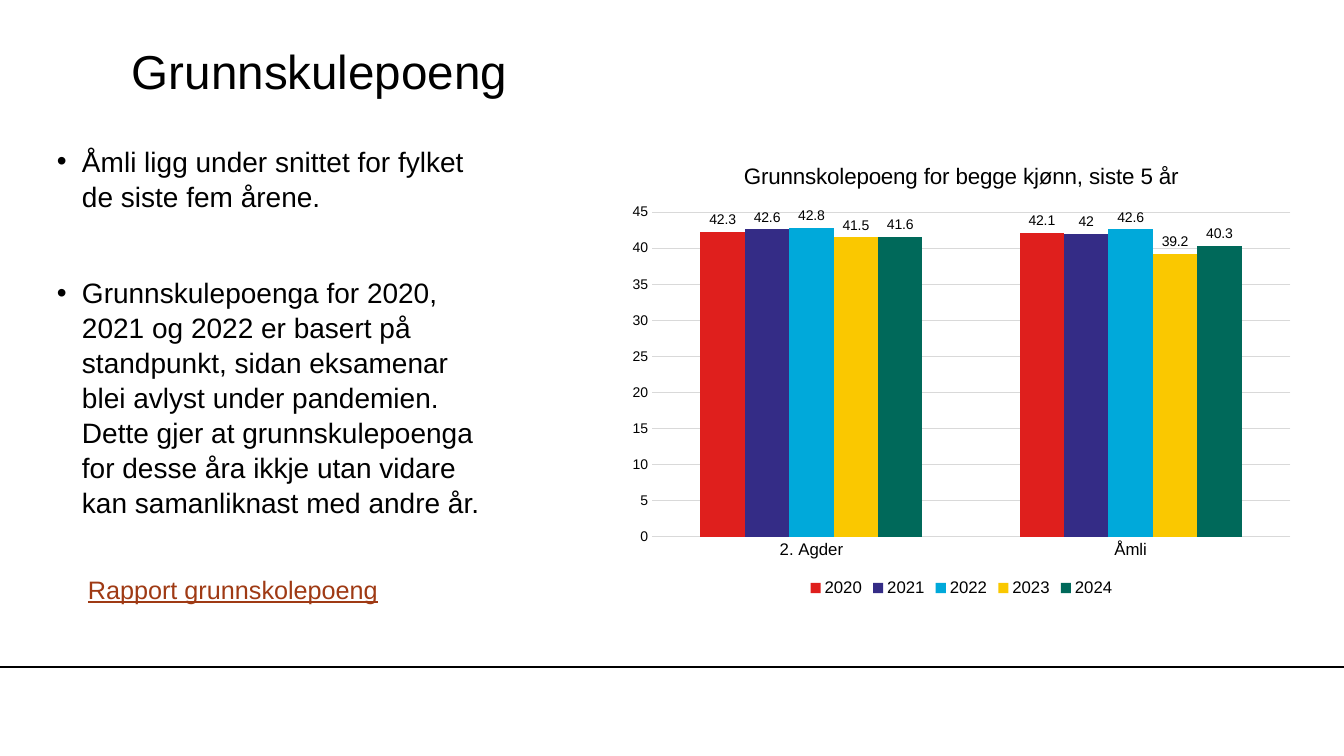
from dataclasses import dataclass

from lxml.etree import SubElement
from pptx import Presentation
from pptx.chart.data import CategoryChartData
from pptx.dml.color import RGBColor
from pptx.enum.chart import XL_CHART_TYPE, XL_LABEL_POSITION, XL_LEGEND_POSITION, XL_TICK_MARK
from pptx.enum.shapes import MSO_CONNECTOR
from pptx.enum.text import MSO_ANCHOR, PP_ALIGN
from pptx.oxml.ns import qn
from pptx.slide import Slide
from pptx.util import Emu, Pt

PX = 914400 / 100.8


def px(length: int) -> Emu:
    return Emu(round(length * PX))


@dataclass(frozen=True)
class Theme:
    font: str = "Arial"
    ink: str = "000000"
    grid: str = "D9D9D9"
    link: str = "9F3A14"
    title: int = 34
    body: int = 20
    report: int = 18
    chart_title: int = 16
    axis: int = 12
    value: int = 10
    rule: float = 0.75


@dataclass(frozen=True)
class Frame:
    left: int
    top: int
    width: int
    height: int

    def emu(self) -> tuple[Emu, Emu, Emu, Emu]:
        return px(self.left), px(self.top), px(self.width), px(self.height)


@dataclass(frozen=True)
class Bullet:
    text: str
    space_before: int


@dataclass(frozen=True)
class Year:
    name: str
    points: tuple[float, float]
    color: str


THEME = Theme()
PLACES = ("2. Agder", "Åmli")
YEARS = (
    Year("2020", (42.3, 42.1), "DF1F1D"),
    Year("2021", (42.6, 42), "342C86"),
    Year("2022", (42.8, 42.6), "00A9DA"),
    Year("2023", (41.5, 39.2), "FAC800"),
    Year("2024", (41.6, 40.3), "00695A"),
)
BULLETS = (
    Bullet("Åmli ligg under snittet for fylket de siste fem årene.", 0),
    Bullet(
        "Grunnskulepoenga for 2020, 2021 og 2022 er basert på standpunkt, sidan "
        "eksamenar blei avlyst under pandemien. Dette gjer at grunnskulepoenga for "
        "desse åra ikkje utan vidare kan samanliknast med andre år.",
        44,
    ),
)


def set_font(font, size: int, color: str = THEME.ink) -> None:
    font.name = THEME.font
    font.size = Pt(size)
    font.bold = False
    font.color.rgb = RGBColor.from_string(color)


def set_line(line, color: str) -> None:
    line.color.rgb = RGBColor.from_string(color)
    line.width = Pt(THEME.rule)


def clear_margins(text_frame) -> None:
    text_frame.margin_left = text_frame.margin_right = 0
    text_frame.margin_top = text_frame.margin_bottom = 0
    text_frame.word_wrap = True


def add_title(page: Slide, text: str, frame: Frame) -> None:
    title = page.shapes.title
    title.left, title.top, title.width, title.height = frame.emu()
    clear_margins(title.text_frame)
    title.text_frame.vertical_anchor = MSO_ANCHOR.MIDDLE
    para = title.text_frame.paragraphs[0]
    para.text = text
    para.alignment = PP_ALIGN.LEFT
    set_font(para.font, THEME.title)


def add_rule(page: Slide, y: int, width: int) -> None:
    rule = page.shapes.add_connector(MSO_CONNECTOR.STRAIGHT, 0, px(y), px(width), px(y))
    set_line(rule.line, THEME.ink)
    SubElement(rule._element.spPr, qn("a:effectLst"))


def add_bullets(page: Slide, bullets: tuple[Bullet, ...], frame: Frame) -> None:
    text_frame = page.shapes.add_textbox(*frame.emu()).text_frame
    clear_margins(text_frame)
    for index, bullet in enumerate(bullets):
        para = text_frame.add_paragraph() if index else text_frame.paragraphs[0]
        para.text = bullet.text
        para.line_spacing = 1.04
        para.space_before = Pt(bullet.space_before)
        properties = para._p.get_or_add_pPr()
        properties.set("marL", str(px(25)))
        properties.set("indent", str(px(-25)))
        SubElement(properties, qn("a:buFont"), typeface=THEME.font)
        SubElement(properties, qn("a:buChar"), char="•")
        set_font(para.font, THEME.body)


def add_report_label(page: Slide, text: str, frame: Frame) -> None:
    text_frame = page.shapes.add_textbox(*frame.emu()).text_frame
    text_frame.word_wrap = True
    para = text_frame.paragraphs[0]
    para.text = text
    set_font(para.font, THEME.report, THEME.link)
    para.font.underline = True


def add_points_chart(page: Slide, title: str, years: tuple[Year, ...], frame: Frame) -> None:
    data = CategoryChartData()
    data.categories = PLACES
    for year in years:
        data.add_series(year.name, year.points)
    chart = page.shapes.add_chart(XL_CHART_TYPE.COLUMN_CLUSTERED, *frame.emu(), data).chart
    set_font(chart.font, THEME.value)

    # Title and legend
    chart.has_title = True
    para = chart.chart_title.text_frame.paragraphs[0]
    para.text = title
    set_font(para.font, THEME.chart_title)
    chart.chart_title.include_in_layout = False
    chart.has_legend = True
    chart.legend.position = XL_LEGEND_POSITION.BOTTOM
    chart.legend.include_in_layout = False
    set_font(chart.legend.font, THEME.axis)

    # Axes
    places, points = chart.category_axis, chart.value_axis
    for axis, size in ((places, THEME.axis), (points, THEME.value)):
        axis.major_tick_mark = axis.minor_tick_mark = XL_TICK_MARK.NONE
        set_font(axis.tick_labels.font, size)
    set_line(places.format.line, THEME.grid)
    points.format.line.fill.background()
    points.minimum_scale, points.maximum_scale, points.major_unit = 0, 45, 5
    set_line(points.major_gridlines.format.line, THEME.grid)

    # Columns
    plot = chart.plots[0]
    plot.gap_width = 219
    plot.overlap = 0
    plot.vary_by_categories = False
    for series, year in zip(plot.series, years):
        series.format.fill.solid()
        series.format.fill.fore_color.rgb = RGBColor.from_string(year.color)
        labels = series.data_labels
        labels.show_value = True
        labels.position = XL_LABEL_POSITION.OUTSIDE_END
        set_font(labels.font, THEME.value)


def main() -> None:
    deck = Presentation()
    deck.slide_width, deck.slide_height = px(1344), px(756)
    page = deck.slides.add_slide(deck.slide_layouts[5])
    add_rule(page, 667, 1344)
    add_title(page, "Grunnskulepoeng", Frame(132, 32, 1119, 76))
    add_bullets(page, BULLETS, Frame(57, 143, 425, 382))
    add_report_label(page, "Rapport grunnskolepoeng", Frame(78, 569, 333, 40))
    add_points_chart(page, "Grunnskolepoeng for begge kjønn, siste 5 år", YEARS,
                     Frame(619, 143, 685, 458))
    deck.save("out.pptx")


if __name__ == "__main__":
    main()
